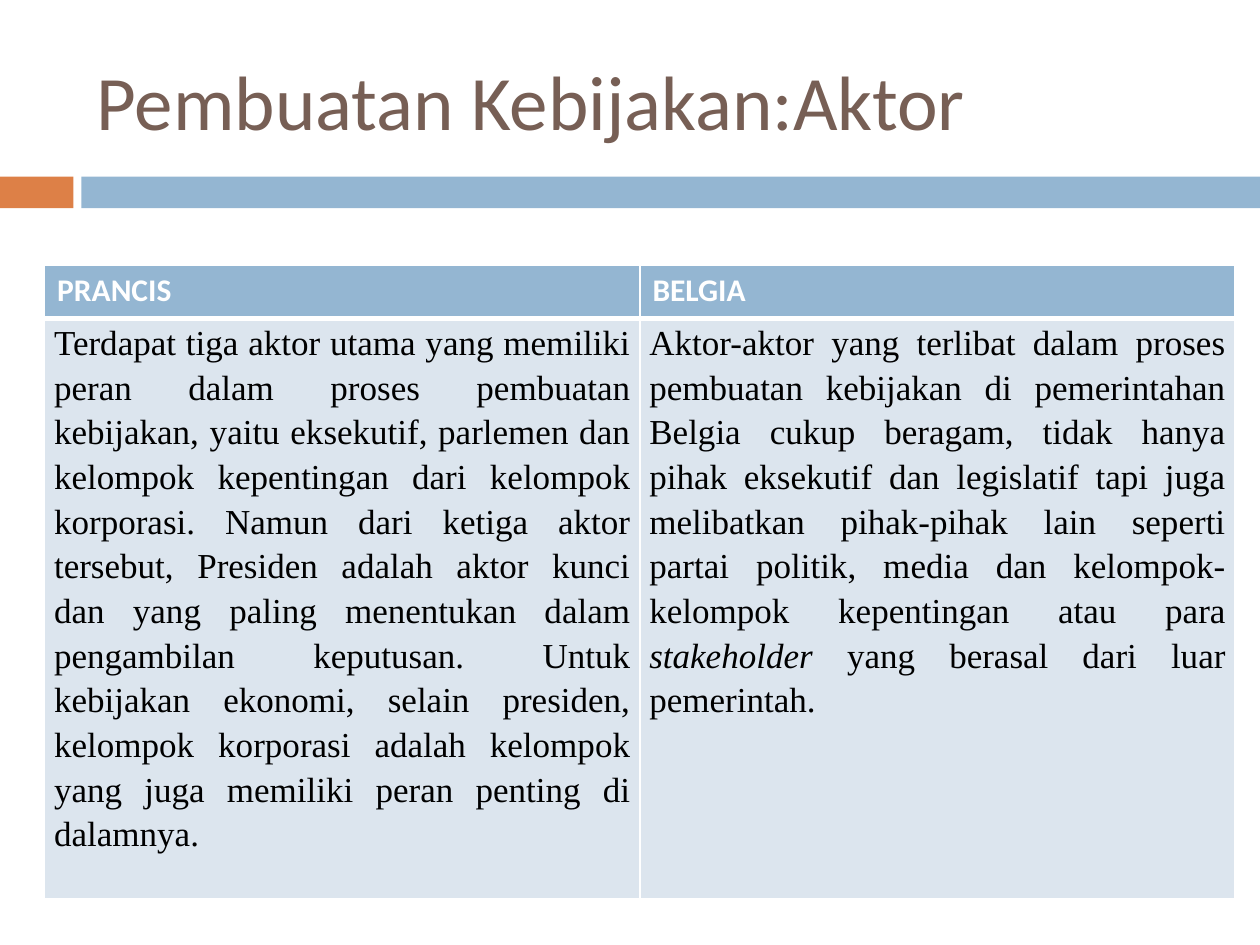
from lxml import etree
from pptx import Presentation
from pptx.dml.color import RGBColor
from pptx.enum.shapes import MSO_SHAPE
from pptx.enum.text import MSO_ANCHOR, PP_ALIGN
from pptx.oxml.ns import qn
from pptx.util import Cm, Pt

RECTANGLE = MSO_SHAPE.RECTANGLE
MIDDLE = MSO_ANCHOR.MIDDLE
JUSTIFY = PP_ALIGN.JUSTIFY
BLUE, ORANGE, BROWN = "94B6D2", "DD8047", "775F55"
PALE, WHITE, BLACK = "DCE5EE", "FFFFFF", "000000"


def color(hex_code):
    return RGBColor.from_string(hex_code)


def add_borders(cell, bottom_width):
    """Draw white cell edges, 1 pt wide except for the bottom one."""
    properties = cell._tc.get_or_add_tcPr()
    for side, width in (("L", 1), ("R", 1), ("T", 1), ("B", bottom_width)):
        line = etree.SubElement(properties, qn(f"a:ln{side}"), w=str(Pt(width)))
        fill = etree.SubElement(line, qn("a:solidFill"))
        etree.SubElement(fill, qn("a:srgbClr"), val=WHITE)


prs = Presentation()
prs.slide_width, prs.slide_height = Cm(25.4), Cm(19.05)
slide = prs.slides.add_slide(prs.slide_layouts[6])

# Accent bar under the title
for left, width, bar_color in ((0, 1.48, ORANGE), (1.64, 23.76, BLUE)):
    bar = slide.shapes.add_shape(RECTANGLE, Cm(left), Cm(3.56), Cm(width), Cm(0.64))
    bar.shadow.inherit = False
    bar.fill.solid()
    bar.fill.fore_color.rgb = color(bar_color)
    bar.line.fill.background()

title = slide.shapes.add_textbox(Cm(1.7), Cm(0.64), Cm(22.66), Cm(2.74)).text_frame
title.word_wrap = True
title.vertical_anchor = MIDDLE
heading = title.paragraphs[0]
heading.text = "Pembuatan Kebijakan:Aktor"
heading.font.name = "Calibri"
heading.font.size = Pt(44)
heading.font.color.rgb = color(BROWN)

# Each country has a list of (text, italic) runs
actors = {
    "PRANCIS": [
        ("Terdapat tiga aktor utama yang memiliki peran dalam proses pembuatan "
         "kebijakan, yaitu eksekutif, parlemen dan kelompok kepentingan dari "
         "kelompok korporasi. Namun dari ketiga aktor tersebut, Presiden adalah "
         "aktor kunci dan yang paling menentukan dalam pengambilan keputusan. "
         "Untuk kebijakan ekonomi, selain presiden, kelompok korporasi adalah "
         "kelompok yang juga memiliki peran penting di dalamnya.", False),
    ],
    "BELGIA": [
        ("Aktor-aktor yang terlibat dalam proses pembuatan kebijakan di "
         "pemerintahan Belgia cukup beragam, tidak hanya pihak eksekutif dan "
         "legislatif tapi juga melibatkan pihak-pihak lain seperti partai politik, "
         "media dan kelompok-kelompok kepentingan atau para ", False),
        ("stakeholder", True),
        (" yang berasal dari luar pemerintah.", False),
    ],
}

table = slide.shapes.add_table(
    2, len(actors), Cm(0.9), Cm(5.34), Cm(24), Cm(11.86)).table
table.rows[0].height, table.rows[1].height = Cm(1.08), Cm(10.78)

for column, (country, description) in enumerate(actors.items()):
    header, body = table.cell(0, column), table.cell(1, column)
    for cell, fill_color, bottom_width in ((header, BLUE, 3), (body, PALE, 1)):
        add_borders(cell, bottom_width)
        cell.fill.solid()
        cell.fill.fore_color.rgb = color(fill_color)

    name = header.text_frame.paragraphs[0]
    name.text = country
    name.font.name = "Calibri"
    name.font.size = Pt(18)
    name.font.bold = True
    name.font.color.rgb = color(WHITE)

    body.margin_left = body.margin_right = Cm(0.19)
    body.margin_top = body.margin_bottom = 0
    explanation = body.text_frame.paragraphs[0]
    explanation.alignment = JUSTIFY
    explanation.line_spacing = 1.15
    explanation.font.name = "Times New Roman"
    explanation.font.size = Pt(20)
    explanation.font.color.rgb = color(BLACK)
    for text, italic in description:
        run = explanation.add_run()
        run.text = text
        run.font.italic = italic

prs.save("out.pptx")
